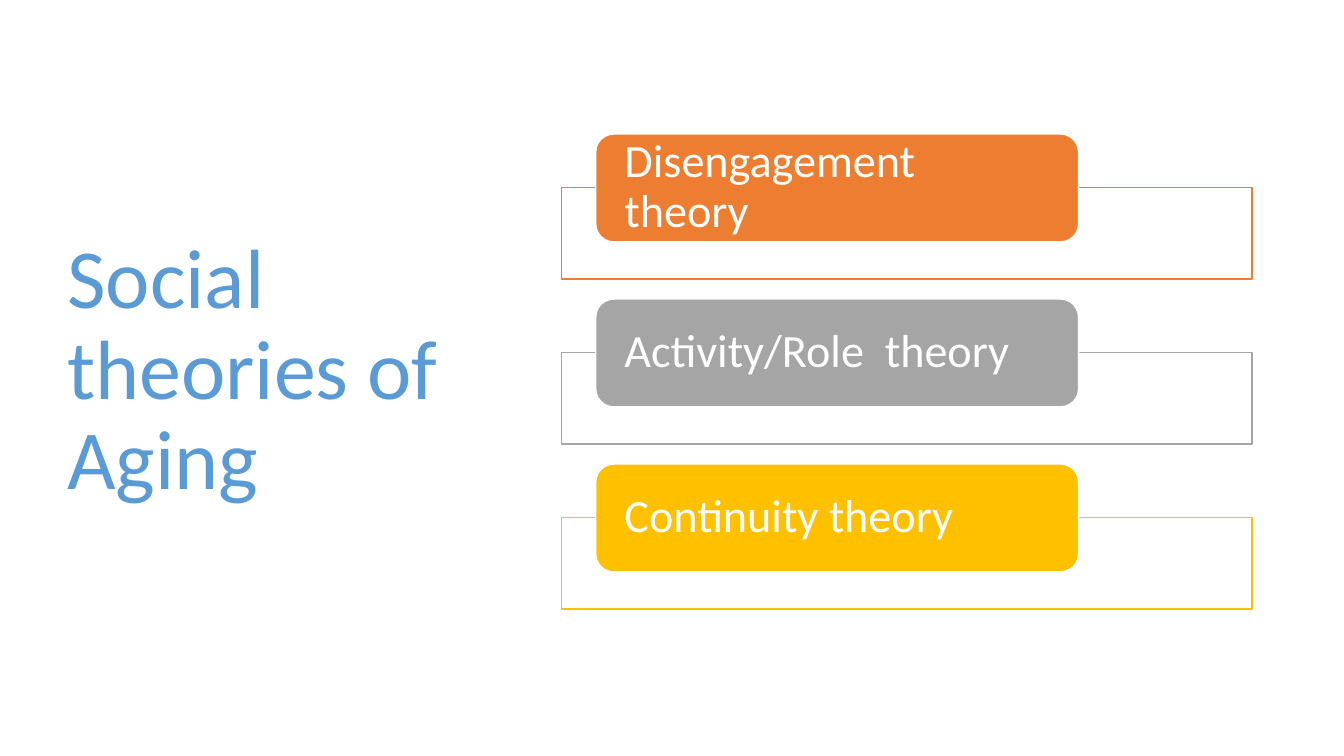
import pptx
import pptx.util
import pptx.dml.color
import pptx.enum.shapes
import pptx.enum.text
import pptx.oxml
import pptx.oxml.ns
from dataclasses import dataclass

Shape = pptx.enum.shapes.MSO_SHAPE


@dataclass(frozen=True)
class Theme:
    font: str = "Calibri"
    white: str = "FFFFFF"
    blue: str = "5B9BD5"
    orange: str = "ED7D31"
    gray: str = "A5A5A5"
    gold: str = "FFC000"
    title: int = 60
    label: int = 33
    line: int = 1
    leading: float = 0.9


class Deck:
    """Draws on one slide; lengths are cells of a grid ten to the inch."""

    def __init__(self, theme):
        self.theme = theme
        self.show = pptx.Presentation()
        self.show.slide_width = self.cell(133.33)
        self.show.slide_height = self.cell(75)
        self.slide = self.show.slides.add_slide(self.show.slide_layouts[6])

    def cell(self, count):
        return pptx.util.Inches(count / 10)

    def color(self, code):
        return pptx.dml.color.RGBColor.from_string(code)

    def letter(self, shape, text, size, color, inset):
        """Put left-aligned, vertically centred text in a shape."""
        frame = shape.text_frame
        frame.word_wrap = True
        frame.vertical_anchor = pptx.enum.text.MSO_ANCHOR.MIDDLE
        frame.margin_left = frame.margin_right = self.cell(inset)
        frame.margin_top = frame.margin_bottom = 0
        para = frame.paragraphs[0]
        para.text = text
        para.alignment = pptx.enum.text.PP_ALIGN.LEFT
        para.line_spacing = self.theme.leading
        para.font.name = self.theme.font
        para.font.size = pptx.util.Pt(size)
        para.font.color.rgb = self.color(color)

    def title(self, text, *box):
        shape = self.slide.shapes.add_textbox(*map(self.cell, box))
        self.letter(shape, text, self.theme.title, self.theme.blue, 1)

    def block(self, kind, box, fill, line):
        shape = self.slide.shapes.add_shape(kind, *map(self.cell, box))
        shape.shadow.inherit = False
        shape.fill.solid()
        shape.fill.fore_color.rgb = self.color(fill)
        shape.line.color.rgb = self.color(line)
        shape.line.width = pptx.util.Pt(self.theme.line)
        return shape

    def frame(self, color, *box):
        """Outlined box with a slightly see-through white fill."""
        shape = self.block(Shape.RECTANGLE, box, self.theme.white, color)
        tint = next(shape.element.iter(pptx.oxml.ns.qn("a:srgbClr")))
        alpha = pptx.oxml.parse_xml(
            f'<a:alpha {pptx.oxml.ns.nsdecls("a")} val="90000"/>')
        tint.append(alpha)

    def label(self, text, color, *box):
        shape = self.block(Shape.ROUNDED_RECTANGLE, box, color, self.theme.white)
        self.letter(shape, text, self.theme.label, self.theme.white, 2.33)


def main():
    theme = Theme()
    deck = Deck(theme)
    deck.title("Social theories of Aging", 5.7, 6.8, 41.6, 60.2)
    rows = [
        ("Disengagement theory", theme.orange),
        ("Activity/Role  theory", theme.gray),
        ("Continuity theory", theme.gold),
    ]
    for row, (text, color) in enumerate(rows):
        top = 13.3 + 16.37 * row
        deck.frame(color, 55.7, top + 5.3, 68.5, 9.1)
        deck.label(text, color, 59.1, top, 47.9, 10.7)
    deck.show.save("out.pptx")


if __name__ == "__main__":
    main()
